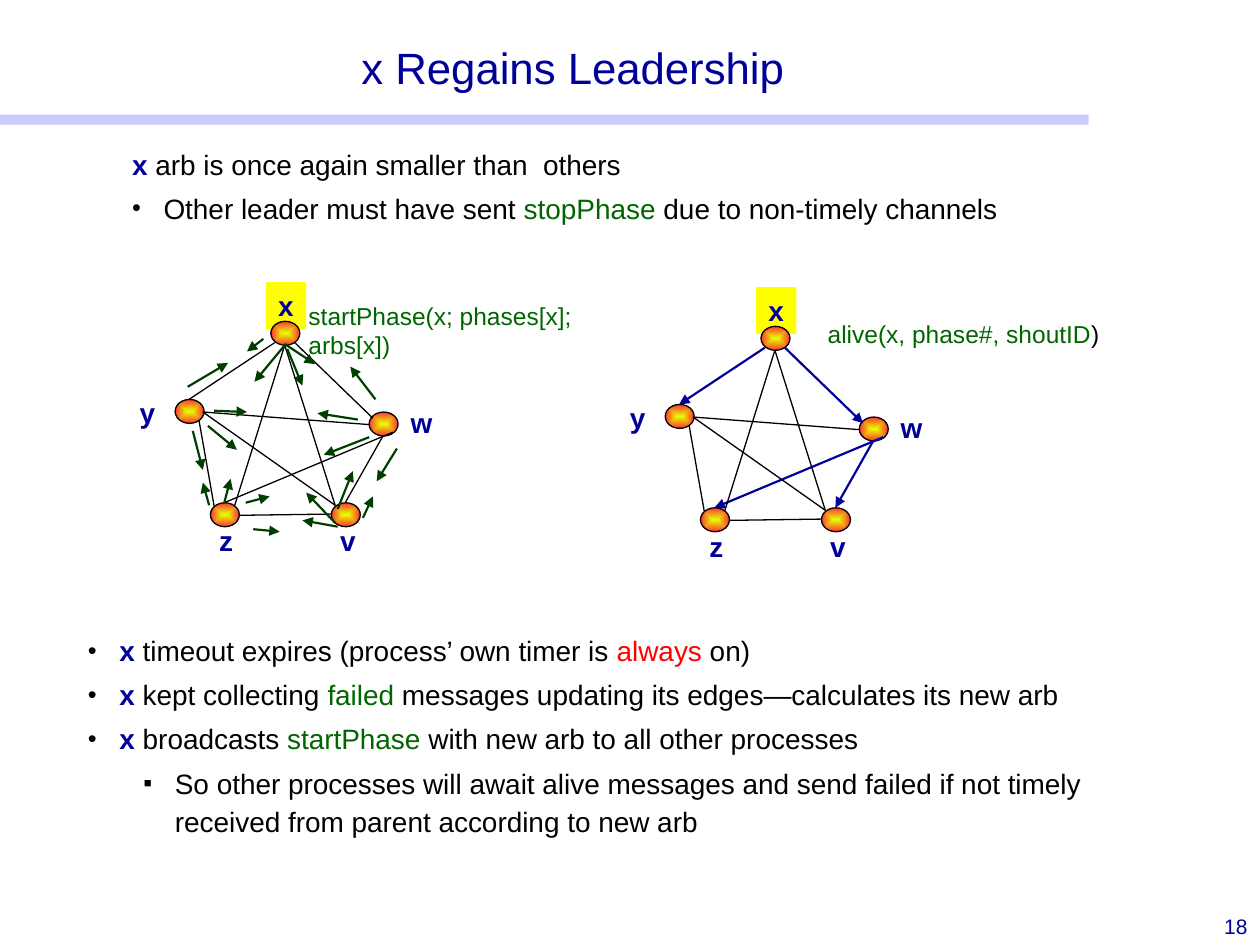
from lxml.etree import SubElement
from pptx import Presentation
from pptx.dml.color import RGBColor
from pptx.enum.shapes import MSO_CONNECTOR, MSO_SHAPE
from pptx.enum.text import MSO_ANCHOR, PP_ALIGN
from pptx.oxml.ns import qn
from pptx.util import Inches, Pt

COLORS = {
    "navy": "000099", "black": "000000", "green": "006600", "red": "FF0000",
    "message": "003E00", "bar": "9999FF", "highlight": "FFFF00",
    "node_center": "E6FF00", "node_edge": "FF3333",
}
FONT = "Arial"
NODE_SIZE = (0.23, 0.19)

# Graph geometry, relative to the top left corner of a graph.
NODES = {"y": (0.38, 0.93), "z": (0.66, 1.75), "w": (1.92, 1.03),
         "x": (1.14, 0.31), "v": (1.62, 1.75)}
LABELS = {"y": (0, 0.85), "z": (0.63, 1.87), "w": (2.15, 0.93),
          "x": (1.1, 0), "v": (1.59, 1.87)}
LABEL_WIDTHS = {"w": 0.37, "z": 0.31}
EDGES = {
    "wz": (2.11, 1.19, 0.77, 1.75), "xy": (1.17, 0.48, 0.49, 0.93),
    "xz": (1.25, 0.5, 0.85, 1.78), "yz": (0.57, 1.1, 0.69, 1.78),
    "xw": (1.33, 0.48, 1.95, 1.08), "yw": (0.6, 1.03, 1.92, 1.13),
    "yv": (0.6, 1.03, 1.65, 1.77), "wv": (2.03, 1.22, 1.73, 1.75),
    "zv": (0.89, 1.85, 1.62, 1.84), "xv": (1.25, 0.5, 1.65, 1.77),
}
TREE_EDGES = ("wz", "xy", "xw", "wv")
MESSAGES = [
    (0.65, 1.77, 0.6, 1.59), (0.77, 1.75, 0.82, 1.56),
    (0.94, 1.75, 1.13, 1.7), (1, 1.96, 1.21, 1.98),
    (2.14, 1.32, 1.98, 1.58), (1.92, 1.23, 1.56, 1.37),
    (1.83, 1.09, 1.51, 1.04), (1.97, 0.93, 1.77, 0.67),
    (0.48, 0.83, 0.8, 0.64), (0.64, 1.14, 0.87, 1.33),
    (0.69, 1.02, 0.95, 1.03), (0.52, 1.18, 0.6, 1.49),
    (1.67, 1.94, 1.39, 1.89), (1.65, 1.91, 1.42, 1.67),
    (1.67, 1.8, 1.79, 1.5), (1.87, 1.87, 1.95, 1.7),
    (1.25, 0.49, 1.49, 0.65), (1.27, 0.53, 1.39, 0.82),
    (1.25, 0.5, 1.01, 0.79), (1.08, 0.45, 0.95, 0.55),
]

INTRO = [
    (None, [("x", "navy"), (" arb is once again smaller than  others", "black")]),
    ("•", [("Other leader must have sent ", "black"), ("stopPhase", "green"),
           (" due to non-timely channels", "black")]),
]
STEPS = [
    ("•", [("x", "navy"), (" timeout expires (process’ own timer is ", "black"),
           ("always", "red"), (" on)", "black")]),
    ("•", [("x", "navy"), (" kept collecting ", "black"), ("failed", "green"),
           (" messages updating its edges—calculates its new arb", "black")]),
    ("•", [("x", "navy"), (" broadcasts ", "black"), ("startPhase ", "green"),
           ("with new arb to all other processes", "black")]),
    ("▪", [("So other processes will await alive messages and send failed if "
            "not timely received from parent according to new arb", "black")]),
]
BULLET_INDENTS = {"•": 0.25, "▪": 0.69}


def rgb(name):
    return RGBColor.from_string(COLORS[name])


def add_spans(para, spans, size, bold_color=None):
    """Add (text, colour) spans; those in bold_color are bold."""
    for text, color in spans:
        span = para.add_run()
        span.text = text
        span.font.name = FONT
        span.font.size = Pt(size)
        span.font.bold = color == bold_color
        span.font.color.rgb = rgb(color)


def add_text(shapes, box, spans, size, align=PP_ALIGN.LEFT, wrap=True, bold_color=None):
    text_box = shapes.add_textbox(*map(Inches, box))
    text_box.text_frame.word_wrap = wrap
    para = text_box.text_frame.paragraphs[0]
    para.alignment = align
    add_spans(para, spans, size, bold_color)
    return text_box


def add_bullet(para, mark):
    props = para._p.get_or_add_pPr()
    props.set("marL", str(Inches(BULLET_INDENTS[mark])))
    props.set("indent", str(Inches(-0.25)))
    color = SubElement(props, qn("a:buClr"))
    SubElement(color, qn("a:srgbClr"), val=COLORS["black"])
    SubElement(props, qn("a:buSzPct"), val="90000")
    SubElement(props, qn("a:buFont"), typeface=FONT)
    SubElement(props, qn("a:buChar"), char=mark)


def add_body(page, box, items):
    frame = page.shapes.add_textbox(*map(Inches, box)).text_frame
    frame.word_wrap = True
    for index, (mark, spans) in enumerate(items):
        para = frame.add_paragraph() if index else frame.paragraphs[0]
        if mark:
            add_bullet(para, mark)
        para.line_spacing = 1.15
        para.space_before = Pt(3.2 if index else 0)
        add_spans(para, spans, 16, bold_color="navy")


def add_header(page, box):
    """Place the title over the bar that runs in from the slide's left edge."""
    title = add_text(page.shapes, box, [("x Regains Leadership", "navy")], 25,
                     PP_ALIGN.CENTER)
    title.text_frame.vertical_anchor = MSO_ANCHOR.BOTTOM
    title.text_frame.paragraphs[0].line_spacing = 1.15
    left, top, width, height = box
    bar = page.shapes.add_shape(MSO_SHAPE.RECTANGLE, 0, Inches(top + height + 0.12),
                                Inches(left + width + 0.01), Inches(0.08))
    bar.shadow.inherit = False
    bar.fill.solid()
    bar.fill.fore_color.rgb = rgb("bar")
    SubElement(bar._element.spPr.find(".//" + qn("a:srgbClr")), qn("a:alpha"), val="50000")
    bar.line.fill.background()


def add_node(shapes, left, top):
    node = shapes.add_shape(MSO_SHAPE.OVAL, Inches(left), Inches(top),
                            *map(Inches, NODE_SIZE))
    node.shadow.inherit = False
    node.line.color.rgb = rgb("black")
    node.line.width = Pt(0.75)
    node.fill.gradient()
    for stop, color in zip(node.fill.gradient_stops, ("node_center", "node_edge")):
        stop.color.rgb = rgb(color)
    gradient = node._element.spPr.find(qn("a:gradFill"))
    gradient.remove(gradient.find(qn("a:lin")))
    shade = SubElement(gradient, qn("a:path"), {"path": "shape"})
    SubElement(shade, qn("a:fillToRect"), dict.fromkeys("ltrb", "50000"))


def add_line(shapes, origin, ends, color, width, arrow):
    left, top = origin
    x1, y1, x2, y2 = ends
    line = shapes.add_connector(MSO_CONNECTOR.STRAIGHT, Inches(left + x1), Inches(top + y1),
                                Inches(left + x2), Inches(top + y2))
    line.line.color.rgb = rgb(color)
    line.line.width = Pt(width)
    if arrow:
        SubElement(line.line._get_or_add_ln(), qn("a:tailEnd"), type="triangle")
    SubElement(line._element.spPr, qn("a:effectLst"))


def add_graph(page, origin, tree_edges=(), messages=()):
    """Draw the five linked processes, with tree edges and messages as arrows."""
    left, top = origin
    shapes = page.shapes.add_group_shape().shapes
    for name, (dx, dy) in LABELS.items():
        box = (left + dx, top + dy, LABEL_WIDTHS.get(name, 0.32), 0.37)
        label = add_text(shapes, box, [(name, "navy")], 16, PP_ALIGN.CENTER,
                         wrap=False, bold_color="navy")
        if name == "x":
            label.fill.solid()
            label.fill.fore_color.rgb = rgb("highlight")
    for dx, dy in NODES.values():
        add_node(shapes, left + dx, top + dy)
    for name, ends in EDGES.items():
        if name in tree_edges:
            add_line(shapes, origin, ends, "navy", 1.25, arrow=True)
        else:
            add_line(shapes, origin, ends, "black", 0.75, arrow=False)
    for ends in messages:
        add_line(shapes, origin, ends, "message", 1.25, arrow=True)


def main():
    deck = Presentation()
    deck.slide_width, deck.slide_height = Inches(10), Inches(7.5)
    page = deck.slides.add_slide(deck.slide_layouts[6])
    add_header(page, (0.46, 0.23, 8.17, 0.56))
    add_text(page.shapes, (9.5, 7.2, 0.5, 0.3), [("18", "navy")], 12, PP_ALIGN.RIGHT)
    add_body(page, (0.6, 4.94, 8.83, 2.16), STEPS)
    add_body(page, (0.95, 1.08, 8.14, 1.19), INTRO)
    add_graph(page, (4.9, 2.28), tree_edges=TREE_EDGES)
    add_text(page.shapes, (6.47, 2.48, 2.72, 0.34),
             [("alive(x, phase#, shoutID", "green"), (")", "black")], 14)
    add_text(page.shapes, (2.35, 2.34, 2.66, 0.69),
             [("startPhase(x; phases[x]; arbs[x])", "green")], 14, wrap=False)
    add_graph(page, (1.01, 2.24), messages=MESSAGES)
    deck.save("out.pptx")


if __name__ == "__main__":
    main()
